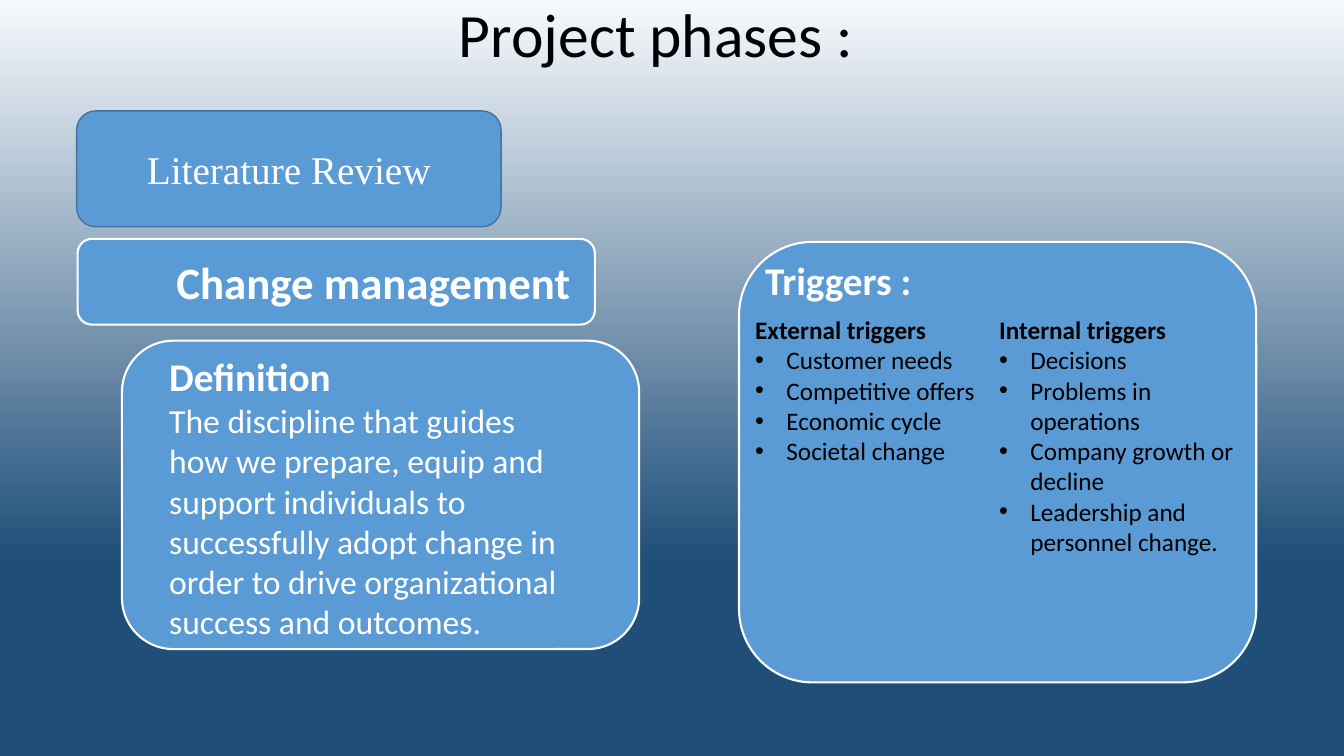
from pptx import Presentation
from pptx.dml.color import RGBColor
from pptx.enum.shapes import MSO_SHAPE
from pptx.enum.text import MSO_ANCHOR, MSO_AUTO_SIZE, PP_ALIGN
from pptx.oxml.ns import qn
from pptx.util import Inches, Pt
from lxml.etree import SubElement

NAVY = RGBColor(0x1F, 0x4E, 0x79)
PALE = RGBColor(0xF7, 0xFA, 0xFD)
BLUE = RGBColor(0x5B, 0x9B, 0xD5)
EDGE = RGBColor(0x43, 0x73, 0x9E)
WHITE = RGBColor(0xFF, 0xFF, 0xFF)
BLACK = RGBColor(0x00, 0x00, 0x00)


def style(paragraph, size, color, bold=False, align=PP_ALIGN.LEFT, name="Calibri"):
    paragraph.alignment = align
    paragraph.space_before = Pt(0)
    font = paragraph.font
    font.name, font.size, font.bold = name, Pt(size), bold
    font.color.rgb = color


def place(shape, left, top, width, height):
    shape.left, shape.top = Inches(left), Inches(top)
    shape.width, shape.height = Inches(width), Inches(height)


presentation = Presentation()
presentation.slide_width = Inches(13.33)
presentation.slide_height = Inches(7.5)
slide = presentation.slides.add_slide(presentation.slide_layouts[3])
title, external_list, internal_list = slide.placeholders

# Background: pale at the top, solid navy from 74 % down
background = slide.background.fill
background.gradient()
background.gradient_angle = 270
for stop, position, color in zip(background.gradient_stops, (0, 0.74), (PALE, NAVY)):
    stop.position = position
    stop.color.rgb = color

# Title
place(title, 0.76, -0.35, 11.5, 1.45)
title.text_frame.text = "Project phases :"
title.text_frame.vertical_anchor = MSO_ANCHOR.MIDDLE
heading = title.text_frame.paragraphs[0]
style(heading, 44, BLACK, align=PP_ALIGN.CENTER)
heading.line_spacing = 0.9

# Rounded panels: review, change management, definition, triggers
panels = []
for bounds, line_color, line_width in [
    ((0.76, 1.1, 4.21, 1.15), EDGE, 1),
    ((0.77, 2.37, 5.13, 0.85), WHITE, 1.5),
    ((1.21, 3.38, 5.13, 3.06), WHITE, 1.5),
    ((7.33, 2.4, 5.13, 4.37), WHITE, 1.5),
]:
    panel = slide.shapes.add_shape(
        MSO_SHAPE.ROUNDED_RECTANGLE, *[Inches(value) for value in bounds])
    panel.shadow.inherit = False
    panel.fill.solid()
    panel.fill.fore_color.rgb = BLUE
    panel.line.color.rgb = line_color
    panel.line.width = Pt(line_width)
    panels.append(panel)

review_frame = panels[0].text_frame
review_frame.text = "Literature Review"
review_frame.vertical_anchor = MSO_ANCHOR.MIDDLE
style(review_frame.paragraphs[0], 28, WHITE, align=PP_ALIGN.CENTER, name="Times New Roman")

# White text on the panels: (text, size, bold) for each paragraph
definition = ("The discipline that guides how we prepare, equip and support individuals to "
              "successfully adopt change in order to drive organizational success and outcomes.")
for bounds, align, lines in [
    ((1.58, 2.48, 4.25, 0.64), PP_ALIGN.CENTER, [("Change management", 32, True)]),
    ((1.58, 3.45, 4.25, 3), PP_ALIGN.LEFT, [("Definition", 28, True), (definition, 24, False)]),
    ((7.49, 2.49, 4.76, 1.04), PP_ALIGN.LEFT, [("Triggers :", 28, True)]),
]:
    text_frame = slide.shapes.add_textbox(*[Inches(value) for value in bounds]).text_frame
    text_frame.word_wrap = True
    text_frame.text = "\n".join(text for text, size, bold in lines)
    for paragraph, (text, size, bold) in zip(text_frame.paragraphs, lines):
        style(paragraph, size, WHITE, bold, align)

# Trigger lists, brought in front of their panel
for trigger_list, left, height, items in [
    (external_list, 7.39, 1.62,
     ["External triggers", "Customer needs", "Competitive offers", "Economic cycle",
      "Societal change"]),
    (internal_list, 9.81, 2.83,
     ["Internal triggers", "Decisions", "Problems in operations",
      "Company growth or decline", "Leadership and personnel change."]),
]:
    place(trigger_list, left, 3.07, 2.55, height)
    slide.shapes._spTree.append(trigger_list._element)
    text_frame = trigger_list.text_frame
    text_frame.text = "\n".join(items)
    text_frame.auto_size = MSO_AUTO_SIZE.NONE
    text_frame.vertical_anchor = MSO_ANCHOR.TOP
    for index, paragraph in enumerate(text_frame.paragraphs):
        is_header = index == 0
        style(paragraph, 18, BLACK, bold=is_header)
        indent = 0 if is_header else Inches(0.31)
        properties = paragraph._p.get_or_add_pPr()
        properties.set("marL", str(indent))
        properties.set("indent", str(-indent))
        bullet = properties.makeelement(qn("a:buNone" if is_header else "a:buChar"))
        if not is_header:
            bullet.set("char", "•")
        properties.find(qn("a:defRPr")).addprevious(bullet)

presentation.save("out.pptx")
